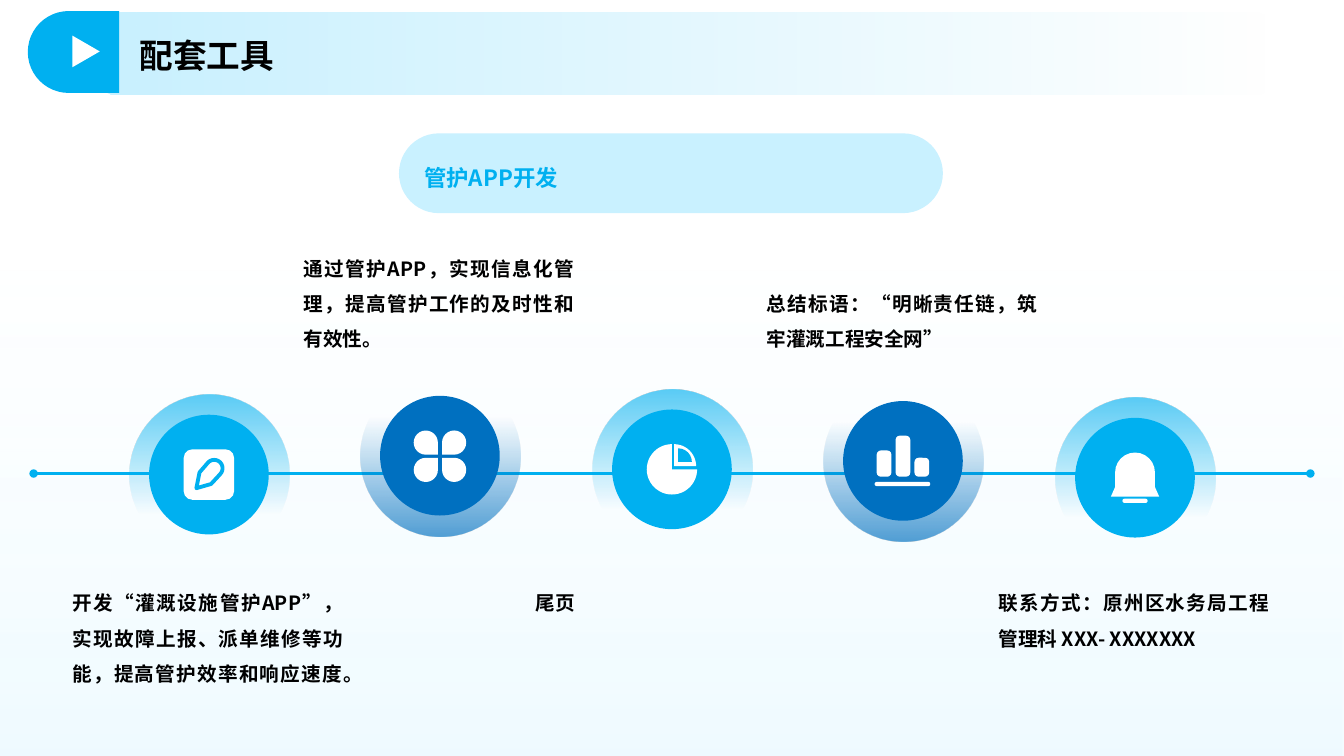
import math

from lxml import etree
from pptx import Presentation
from pptx import util as u
from pptx.dml.color import RGBColor
from pptx.enum import shapes, text
from pptx.oxml.ns import qn

PX = 9525
FONT = "Noto Sans CJK SC"
WHITE = RGBColor(0xFF, 0xFF, 0xFF)
BLACK = RGBColor(0x00, 0x00, 0x00)
SKY = RGBColor(0x00, 0xB0, 0xF0)
BLUE = RGBColor(0x00, 0x70, 0xC0)
PALE = RGBColor(0xC9, 0xF1, 0xFF)
ICE = RGBColor(0x93, 0xE2, 0xFF)
KIND = shapes.MSO_SHAPE

deck = Presentation()
deck.slide_width, deck.slide_height = 1280 * PX, 720 * PX
page = deck.slides.add_slide(deck.slide_layouts[5])


def draw(kind, left, top, width, height, paint, adjust=(), turn=0, angle=270):
    shape = page.shapes.add_shape(kind, left * PX, top * PX, width * PX, height * PX)
    shape.shadow.inherit = False
    shape.line.fill.background()
    shape.rotation = turn
    for index, value in enumerate(adjust):
        shape.adjustments[index] = value
    if isinstance(paint, list):
        shape.fill.gradient()
        shape.fill.gradient_angle = angle
        marks = list(shape.element.iter(qn("a:gs")))
        for stop, mark, (place, color, opacity) in zip(shape.fill.gradient_stops, marks, paint):
            stop.position = place / 100
            stop.color.rgb = color
            etree.SubElement(mark[0], qn("a:alpha"), val=str(opacity * 1000))
    else:
        shape.fill.solid()
        shape.fill.fore_color.rgb = paint
    return shape


def write(box, words, size, color, spacing, anchor):
    frame = box.text_frame
    frame.word_wrap = True
    frame.auto_size = text.MSO_AUTO_SIZE.NONE
    frame.margin_left = frame.margin_right = frame.margin_top = frame.margin_bottom = 0
    frame.vertical_anchor = anchor
    frame.text = words
    para = frame.paragraphs[0]
    para.alignment = text.PP_ALIGN.JUSTIFY
    para.line_spacing = spacing
    para.font.size = u.Pt(size)
    para.font.bold = True
    para.font.color.rgb = color
    para.font.name = FONT
    for style in box.element.iter(qn("a:defRPr")):
        etree.SubElement(style, qn("a:ea"), typeface=FONT)


draw(KIND.RECTANGLE, 0, 0, 1280, 720, [(35, PALE, 0), (100, ICE, 15)])
draw(KIND.ROUNDED_RECTANGLE, 380, 127, 518, 76, PALE, [0.5])

timeline = page.shapes.add_connector(
    shapes.MSO_CONNECTOR.STRAIGHT, 32 * PX, 451 * PX, 1248 * PX, 451 * PX)
timeline.line.color.rgb = SKY
timeline.line.width = u.Pt(2)
stroke = timeline.line._get_or_add_ln()
for end in ("a:headEnd", "a:tailEnd"):
    etree.SubElement(stroke, qn(end), type="oval")
etree.SubElement(timeline.element.spPr, qn("a:effectLst"))

CAPTIONS = [
    "开发“灌溉设施管护APP”，实现故障上报、派单维修等功能，提高管护效率和响应速度。",
    "通过管护APP，实现信息化管理，提高管护工作的及时性和有效性。",
    "尾页",
    "总结标语：“明晰责任链，筑牢灌溉工程安全网”",
    "联系方式：原州区水务局工程管理科 XXX- XXXXXXX",
]
CENTERS = [(199, 452), (419, 434), (640, 447), (860, 439), (1081, 455)]
BAR = KIND.ROUNDED_RECTANGLE
ICONS = [
    [(BAR, -24, -24, 48, 48, WHITE, [0.17])],
    [(KIND.TEAR, -25, -24, 23, 23, WHITE, [], 90),
     (KIND.TEAR, 2, -24, 23, 23, WHITE, [], 180),
     (KIND.TEAR, 2, 2, 23, 23, WHITE, [], 270),
     (KIND.TEAR, -25, 2, 23, 23, WHITE)],
    [(KIND.PIE, -24, -24, 48, 48, WHITE),
     (KIND.PIE, -19, -24, 42, 42, WHITE, [162, 0]),
     (KIND.PIE, -7, -20, 26, 26, SKY, [162, 0])],
    [(BAR, -25, -10, 14, 25, WHITE, [0.28]),
     (BAR, -7, -24, 14, 39, WHITE, [0.28]),
     (BAR, 11, -3, 14, 18, WHITE, [0.28]),
     (BAR, -27, 20, 53, 4, WHITE, [0.5])],
    [(KIND.ROUND_2_SAME_RECTANGLE, -19, -24, 38, 40, WHITE, [0.5, 0]),
     (KIND.TRAPEZOID, -23, 9, 46, 9, WHITE, [0.44]),
     (BAR, -12, 20, 24, 4, WHITE, [0.5])],
]

for index, (caption, (x, y), icon) in enumerate(zip(CAPTIONS, CENTERS, ICONS)):
    raised = index % 2 == 1
    color, opacity = (BLUE, 67) if raised else (SKY, 64)
    halo = draw(KIND.OVAL, x - 76, y - 76, 153, 153, [(0, color, opacity), (74, color, 0)])
    if raised:
        halo.element.spPr.xfrm.set("flipV", "1")
    top, height = (219, 115) if raised else (552, 140)
    box = page.shapes.add_textbox((x - 130) * PX, top * PX, 258 * PX, height * PX)
    anchor = text.MSO_ANCHOR.BOTTOM if raised else text.MSO_ANCHOR.TOP
    write(box, caption, 14, BLACK, 1.5, anchor)
    draw(KIND.OVAL, x - 57, y - 57, 114, 114, color)
    for kind, left, top, *rest in icon:
        draw(kind, x + left, y + top, *rest)

x, y = CENTERS[0]
turns = [math.radians(degrees) for degrees in range(-135, 46, 15)]
cap = [(5 + 8 * math.cos(turn), -6 + 8 * math.sin(turn)) for turn in turns]
outline = [(round((x + dx) * PX), round((y + dy) * PX))
           for dx, dy in [(-12, 13), (-9, -2), *cap, (2, 9)]]
builder = page.shapes.build_freeform(*outline[0])
builder.add_line_segments(outline[1:], close=True)
pencil = builder.convert_to_shape()
pencil.shadow.inherit = False
pencil.fill.background()
pencil.line.color.rgb = SKY
pencil.line.width = u.Pt(2.75)

heading = page.shapes.add_textbox(404 * PX, 127 * PX, 464 * PX, 77 * PX)
write(heading, "管护APP开发", 16, SKY, 1.3, text.MSO_ANCHOR.MIDDLE)

draw(KIND.ROUNDED_RECTANGLE, 96, 12, 1114, 78, [(0, PALE, 100), (100, PALE, 0)], angle=0)
title = page.shapes.title
title.left, title.top, title.width, title.height = 133 * PX, 25 * PX, 817 * PX, 52 * PX
write(title, "配套工具", 24, BLACK, 1.1, text.MSO_ANCHOR.MIDDLE)
title.element.getparent().append(title.element)
draw(KIND.ROUND_2_SAME_RECTANGLE, 31, 6, 78, 87, SKY, [0.5, 0], 270)
draw(KIND.ISOSCELES_TRIANGLE, 67, 36, 30, 26, WHITE, [], 90)

deck.save("out.pptx")
